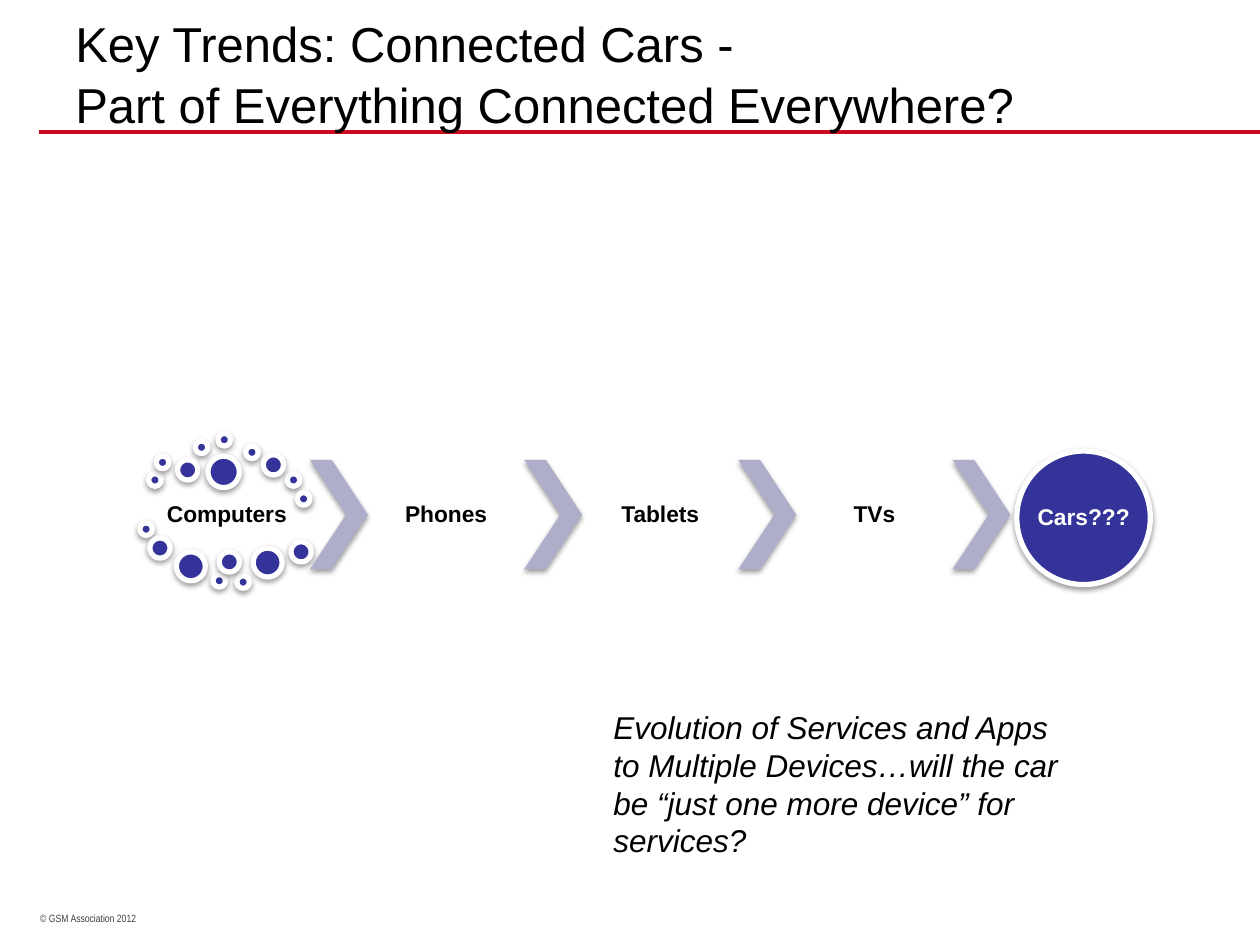
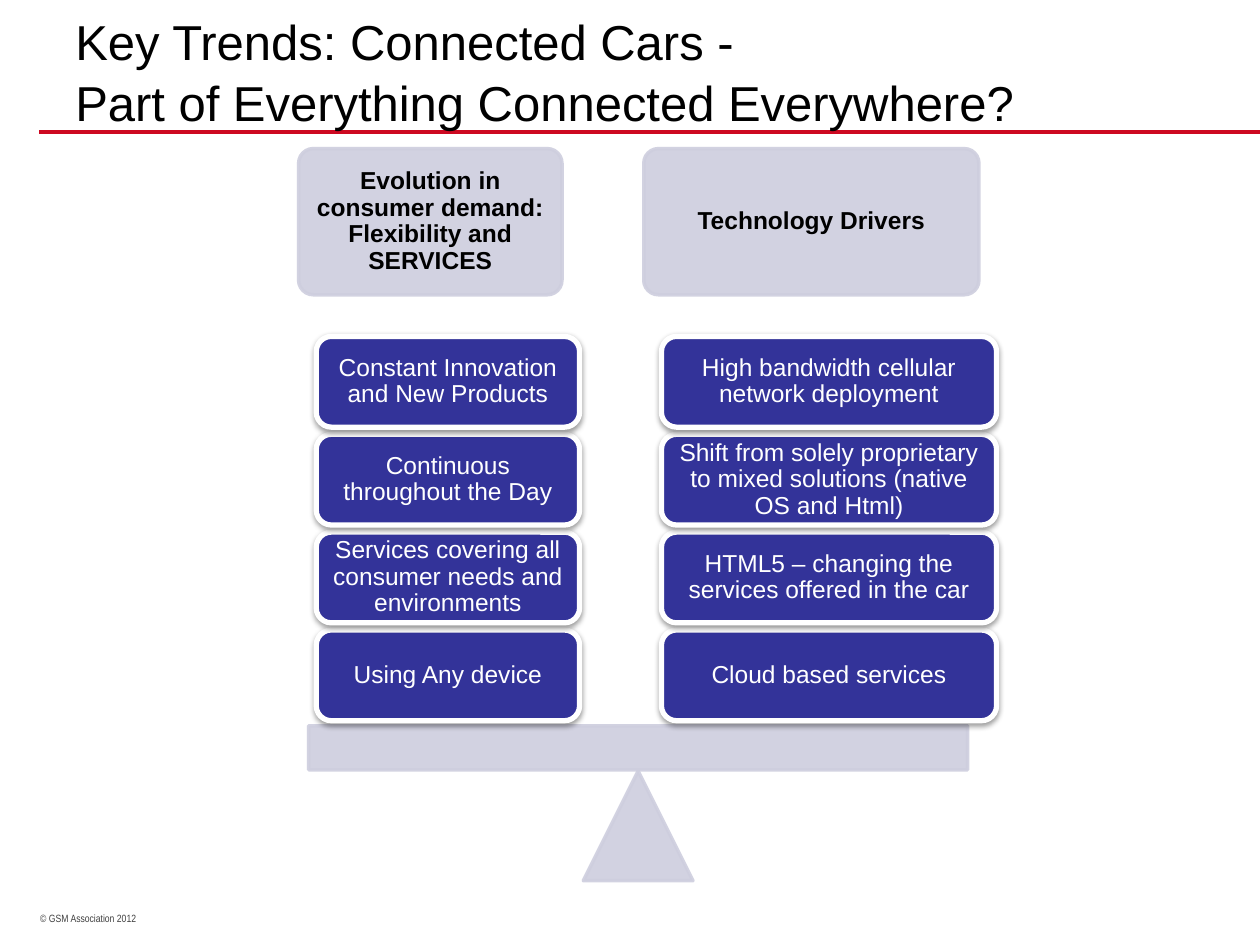
from dataclasses import dataclass

from lxml import etree
from pptx import Presentation
from pptx.dml.color import RGBColor
from pptx.enum.shapes import MSO_CONNECTOR, MSO_SHAPE
from pptx.enum.text import MSO_ANCHOR, PP_ALIGN
from pptx.oxml.ns import qn
from pptx.util import Inches, Pt

STRAIGHT = MSO_CONNECTOR.STRAIGHT
OVAL, CHEVRON, RECT = MSO_SHAPE.OVAL, MSO_SHAPE.CHEVRON, MSO_SHAPE.RECTANGLE
ROUND, TRIANGLE = MSO_SHAPE.ROUNDED_RECTANGLE, MSO_SHAPE.ISOSCELES_TRIANGLE
TOP, MIDDLE = MSO_ANCHOR.TOP, MSO_ANCHOR.MIDDLE
LEFT, CENTER = PP_ALIGN.LEFT, PP_ALIGN.CENTER


@dataclass(frozen=True)
class Theme:
    font: str = "Arial"
    footer_font: str = "Arial Narrow"
    black: str = "000000"
    white: str = "FFFFFF"
    red: str = "CD0921"
    navy: str = "333399"
    lilac: str = "AEAECA"
    pale: str = "CECEDE"
    grey: str = "404040"
    title: int = 28
    remark: int = 18
    card: int = 14
    label: int = 13
    footer: int = 6


T = Theme()

# Content
TITLE = "Key Trends: Connected Cars -\vPart of Everything Connected Everywhere?"
FOOTER = "© GSM Association 2012"
REMARK = ("Evolution of Services and Apps to Multiple Devices…will the car "
          "be “just one more device” for services?")
FIRST_DEVICE = "Computers"
NEXT_DEVICES = ["Phones", "Tablets", "TVs"]
LAST_DEVICE = "Cars???"

# Bubbles around the first device: diameter -> top-left corners
BUBBLES = {
    0.1: [(1.18, 3.76), (1.24, 3.62), (1.55, 3.5), (1.73, 3.44), (1.95, 3.54),
          (2.28, 3.76), (2.36, 3.91), (1.11, 4.15), (1.69, 4.56), (1.88, 4.57)],
    0.16: [(1.41, 3.65), (2.09, 3.61), (1.19, 4.27), (1.74, 4.38), (2.31, 4.3)],
    0.23: [(1.4, 4.38), (2.01, 4.35)],
    0.25: [(1.65, 3.62)],
}

# Sides of the balance: left edge, width, heading, cards from the top down
SIDES = [
    (2.37, 2.09, "Evolution in consumer demand: Flexibility and SERVICES",
     ["Constant Innovation and New Products",
      "Continuous throughout the Day",
      "Services covering all consumer needs and environments",
      "Using Any device"]),
    (5.11, 2.66, "Technology Drivers",
     ["High bandwidth cellular network deployment",
      "Shift from solely proprietary to mixed solutions (native OS and Html)",
      "HTML5 – changing the services offered in the car",
      "Cloud based services"]),
]


# Helpers
def rgb(color):
    return RGBColor.from_string(color)


def write(sp, text, size, color=T.black, font=T.font, bold=False, italic=False,
          align=CENTER, anchor=MIDDLE, inset=(0.02,) * 4, spacing=0.9):
    tf = sp.text_frame
    tf.word_wrap = True
    tf.vertical_anchor = anchor
    (tf.margin_left, tf.margin_top,
     tf.margin_right, tf.margin_bottom) = map(Inches, inset)
    p = tf.paragraphs[0]
    p.text = text
    p.alignment = align
    p.line_spacing = spacing
    p.font.name, p.font.size = font, Pt(size)
    p.font.bold, p.font.italic = bold, italic
    p.font.color.rgb = rgb(color)


def add_text(s, box, text, size, **style):
    write(s.shapes.add_textbox(*map(Inches, box)), text, size, **style)


def add_left_text(s, box, text, size, inset=(0.1, 0.05, 0.1, 0.05),
                  spacing=1.0, **style):
    add_text(s, box, text, size, align=LEFT, anchor=TOP, inset=inset,
             spacing=spacing, **style)


def add_shape(s, kind, box, fill, line=None, width=0, adj=None):
    sp = s.shapes.add_shape(kind, *map(Inches, box))
    sp.shadow.inherit = False
    sp.fill.solid()
    sp.fill.fore_color.rgb = rgb(fill)
    if line:
        sp.line.color.rgb = rgb(line)
        sp.line.width = Pt(width)
    else:
        sp.line.fill.background()
    if adj is not None:
        sp.adjustments[0] = adj
    return sp


def set_alpha(color_el, percent):
    etree.SubElement(color_el, qn("a:alpha"), val=str(percent * 1000))


def add_shadow(sp):
    effects = sp._element.spPr.find(qn("a:effectLst"))
    shadow = etree.SubElement(effects, qn("a:outerShdw"), blurRad="40000",
                              dist="20000", dir="5400000", rotWithShape="0")
    set_alpha(etree.SubElement(shadow, qn("a:srgbClr"), val=T.black), 38)


def add_raised(s, kind, box):
    sp = add_shape(s, kind, box, T.navy, T.white, 3)
    add_shadow(sp)
    return sp


def add_pale(s, kind, box, adj=None):
    sp = add_shape(s, kind, box, T.pale, T.pale, 2, adj)
    for color_el in sp._element.spPr.iter(qn("a:srgbClr")):
        set_alpha(color_el, 90)
    return sp


def add_slide(prs, title_top):
    s = prs.slides.add_slide(prs.slide_layouts[6])
    add_left_text(s, (0.31, 7.19, 1.56, 0.2), FOOTER, T.footer, color=T.grey,
                  font=T.footer_font, inset=(0.01, 0.05, 0.1, 0.05))
    rule = s.shapes.add_connector(
        STRAIGHT, *map(Inches, (0.31, 1.05, 10, 1.05)))
    rule.line.color.rgb = rgb(T.red)
    rule.line.width = Pt(2.25)
    etree.SubElement(rule._element.spPr, qn("a:effectLst"))
    add_left_text(s, (0.5, title_top, 9, 1), TITLE, T.title, spacing=1.04)
    return s


# Slide 1: chain of devices
def build_devices(prs):
    s = add_slide(prs, 0.04)
    add_text(s, (1.18, 3.88, 1.24, 0.41), FIRST_DEVICE, T.label, bold=True)
    for size, corners in BUBBLES.items():
        for x, y in corners:
            add_raised(s, OVAL, (x, y, size, size))

    left, top, arrow_w, label_w, height = 2.46, 3.65, 0.46, 1.24, 0.87
    for i in range(len(NEXT_DEVICES) + 1):
        x = left + i * (arrow_w + label_w)
        add_shadow(add_shape(s, CHEVRON, (x, top, arrow_w, height), T.lilac,
                             adj=0.623))
        if i < len(NEXT_DEVICES):
            add_text(s, (x + arrow_w, top, label_w, height), NEXT_DEVICES[i],
                     T.label, bold=True)

    car = add_raised(s, OVAL, (8.07, 3.58, 1.06, 1.06))
    write(car, LAST_DEVICE, T.label, T.white, bold=True, inset=(0,) * 4)
    add_left_text(s, (4.77, 5.57, 3.91, 1.31), REMARK, T.remark, italic=True)


# Slide 2: balance of demand and technology
def build_balance(prs):
    s = add_slide(prs, 0.02)
    add_pale(s, TRIANGLE, (4.63, 6.12, 0.87, 0.87))
    add_pale(s, RECT, (2.45, 5.76, 5.23, 0.35))

    first_top, last_top, shift, inset = 2.67, 5.0, 0.14, (0.06,) * 4
    for left, width, heading, cards in SIDES:
        head = add_pale(s, ROUND, (left, 1.18, width, 1.16), adj=0.1)
        write(head, heading, T.card, bold=True, inset=inset)
        pitch = (last_top - first_top) / (len(cards) - 1)
        for i, text in reversed(list(enumerate(cards))):
            card = add_raised(
                s, ROUND, (left + shift, first_top + i * pitch, width, 0.72))
            write(card, text, T.card, T.white, inset=inset)


def main():
    prs = Presentation()
    prs.slide_width, prs.slide_height = Inches(10), Inches(7.5)
    build_devices(prs)
    build_balance(prs)
    prs.save("out.pptx")


if __name__ == "__main__":
    main()
